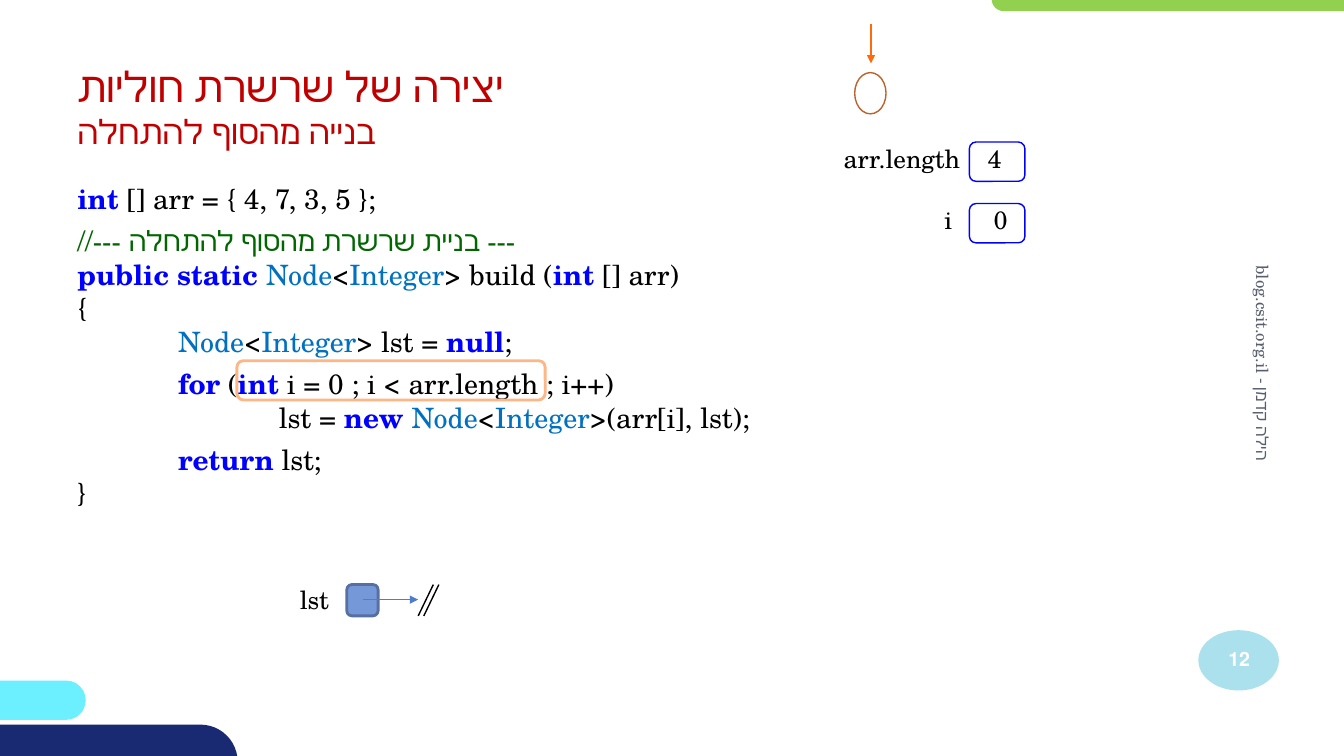
from dataclasses import dataclass

from lxml import etree
from pptx import Presentation
from pptx.dml.color import RGBColor
from pptx.enum.shapes import MSO_CONNECTOR, MSO_SHAPE
from pptx.enum.text import MSO_ANCHOR, PP_ALIGN
from pptx.oxml.ns import qn
from pptx.slide import Slide
from pptx.util import Cm, Pt

ELLIPSE, ROUNDED = MSO_SHAPE.OVAL, MSO_SHAPE.ROUNDED_RECTANGLE
STRAIGHT = MSO_CONNECTOR.STRAIGHT
TOP, MIDDLE, BOTTOM = MSO_ANCHOR.TOP, MSO_ANCHOR.MIDDLE, MSO_ANCHOR.BOTTOM
LEFT, CENTER, RIGHT = PP_ALIGN.LEFT, PP_ALIGN.CENTER, PP_ALIGN.RIGHT
CODE_TABS = (2.54, 5.08)


@dataclass(frozen=True)
class Theme:
    font: str = "TeX Gyre Schola"
    black: str = "000000"
    white: str = "FFFFFF"
    title: str = "C00000"
    keyword: str = "0000FF"
    type_name: str = "0070C0"
    comment: str = "006600"
    footer: str = "575F6D"
    badge: str = "AAE1EC"
    cyan: str = "6CF0FF"
    green: str = "92D050"
    navy: str = "192A72"
    node: str = "7598D9"
    node_edge: str = "5770A1"
    pointer: str = "4F7CCF"
    highlight: str = "FEB687"
    orange: str = "FF6B0A"
    brown: str = "BC6329"
    title_size: int = 30
    subtitle_size: int = 24
    code_size: int = 20
    label_size: int = 18
    number_size: int = 14
    footer_size: int = 12


T = Theme()


@dataclass(frozen=True)
class Run:
    text: str
    size: int = T.code_size
    color: str = T.black
    bold: bool = False
    small_caps: bool = False


@dataclass(frozen=True)
class Para:
    runs: tuple[Run, ...]
    align: PP_ALIGN = LEFT
    rtl: bool = False
    before: float = 0
    tabs: tuple[float, ...] = ()


@dataclass(frozen=True)
class Box:
    at: tuple[float, float, float, float]
    paras: tuple[Para, ...]
    anchor: MSO_ANCHOR = TOP
    rotation: int = 0


@dataclass(frozen=True)
class Shape:
    kind: MSO_SHAPE
    at: tuple[float, float, float, float]
    fill: str | None = None
    line: str | None = None
    width: float = 1
    round_ends: bool = False


@dataclass(frozen=True)
class Line:
    at: tuple[float, float, float, float]
    color: str
    arrow: bool = False


def kw(text: str) -> Run:
    return Run(text, color=T.keyword, bold=True)


def typ(text: str) -> Run:
    return Run(text, color=T.type_name)


NODE_OF_INTEGER = (typ("Node"), Run("<"), typ("Integer"))

BACKDROP = (
    Shape(ELLIPSE, (30.2, 15.88, 2.03, 1.52), T.badge),
    Shape(ROUNDED, (-11.07, 17.15, 13.23, 0.99), T.cyan, round_ends=True),
    Shape(ROUNDED, (24.99, -0.33, 14.73, 0.61), T.green, round_ends=True),
    Shape(ROUNDED, (-15.47, 18.26, 21.46, 1.88), T.navy, round_ends=True),
)

TITLE = Box((1.7, 0.76, 27.66, 3.18), (Para((
    Run("יצירה של שרשרת חוליות\n", T.title_size, T.title, small_caps=True),
    Run("בנייה מהסוף להתחלה", T.subtitle_size, T.title, small_caps=True),
), rtl=True),), BOTTOM)

CODE = Box((1.7, 4.45, 27.66, 13.54), (
    Para((kw("int"), Run(" [] arr = { 4, 7, 3, 5 };"))),
    Para((
        Run("//--- בניית שרשרת מהסוף להתחלה ---\n", color=T.comment),
        kw("public static "), *NODE_OF_INTEGER, Run("> build ("),
        kw("int"), Run(" [] arr)\n{\n\t"),
        *NODE_OF_INTEGER, Run("> lst = "), kw("null"), Run(";"),
    ), before=6, tabs=CODE_TABS),
    Para((
        Run("\t"), kw("for"), Run(" ("), kw("int"),
        Run(" i = 0 ; i < arr.length ; i++)\n\t\tlst = "),
        kw("new "), *NODE_OF_INTEGER, Run(">(arr[i], lst);"),
    ), before=6, tabs=CODE_TABS),
    Para((Run("\t"), kw("return"), Run(" lst;\n}")), before=6, tabs=CODE_TABS),
))

LABELS = (
    Box((7.14, 14.6, 1.4, 1.02),
        (Para((Run("lst", T.label_size),), RIGHT, rtl=True),)),
    Box((21.01, 3.48, 5.21, 2.57), (
        Para((Run("arr.length\t4", T.label_size),), tabs=(3.63,)),
        Para((Run("\ti\t0", T.label_size),), before=22, tabs=(2.54, 3.78)),
    )),
    Box((27.38, 10.21, 8.89, 1.35), (Para((
        Run("הילה קדמן - blog.csit.org.il", T.footer_size, T.footer),
    ), rtl=True),), MIDDLE, 90),
    Box((30.1, 15.88, 2.26, 1.45), (Para((
        Run("12", T.number_size, T.white, True),
    ), CENTER, rtl=True),), MIDDLE),
)

DIAGRAM = (
    Shape(ROUNDED, (8.74, 14.73, 0.79, 0.79), T.node, T.node_edge, 2),
    Shape(ROUNDED, (5.97, 9.09, 7.77, 0.99), line=T.highlight, width=2),
    Shape(ELLIPSE, (21.54, 1.83, 0.79, 1.04), line=T.brown),
    *(Shape(ROUNDED, (24.43, 3.58 + 1.55 * row, 1.4, 0.99), line=T.keyword)
      for row in range(2)),
)

LINES = (
    Line((9.14, 15.11, 10.54, 15.11), T.pointer, True),
    *(Line((10.92 + shift, 14.73, 10.54 + shift, 15.52), T.black)
      for shift in (0, 0.14)),
    Line((21.95, 0.61, 21.95, 1.6), T.orange, True),
)


def add_shape(s: Slide, item: Shape) -> None:
    sp = s.shapes.add_shape(item.kind, *map(Cm, item.at))
    sp.shadow.inherit = False
    if item.round_ends:
        sp.adjustments[0] = 0.5
    if item.fill:
        sp.fill.solid()
        sp.fill.fore_color.rgb = RGBColor.from_string(item.fill)
    else:
        sp.fill.background()
    if item.line:
        sp.line.color.rgb = RGBColor.from_string(item.line)
        sp.line.width = Pt(item.width)
    else:
        sp.line.fill.background()


def add_line(s: Slide, item: Line) -> None:
    cx = s.shapes.add_connector(STRAIGHT, *map(Cm, item.at))
    cx.line.color.rgb = RGBColor.from_string(item.color)
    cx.line.width = Pt(1)
    if item.arrow:
        etree.SubElement(cx.line._get_or_add_ln(), qn("a:tailEnd"), type="triangle")
    etree.SubElement(cx._element.spPr, qn("a:effectLst"))


def add_run(p, item: Run) -> None:
    for i, text in enumerate(item.text.split("\n")):
        if i:
            p.add_line_break()
        if not text:
            continue
        r = p.add_run()
        r.text = text
        fmt = {"name": T.font, "size": Pt(item.size), "bold": item.bold}
        for name, value in fmt.items():
            setattr(r.font, name, value)
        r.font.color.rgb = RGBColor.from_string(item.color)
        if item.small_caps:
            r._r.get_or_add_rPr().set("cap", "small")


def add_text(s: Slide, box: Box) -> None:
    sp = s.shapes.add_textbox(*map(Cm, box.at))
    sp.rotation = box.rotation
    tf = sp.text_frame
    tf.word_wrap = True
    tf.vertical_anchor = box.anchor
    for i, item in enumerate(box.paras):
        p = tf.add_paragraph() if i else tf.paragraphs[0]
        pPr = p._p.get_or_add_pPr()
        if item.tabs:
            tabs = etree.SubElement(pPr, qn("a:tabLst"))
            for stop in item.tabs:
                etree.SubElement(tabs, qn("a:tab"), pos=str(Cm(stop)), algn="l")
        if item.rtl:
            pPr.set("rtl", "1")
        for name, value in {"alignment": item.align, "space_before": Pt(item.before)}.items():
            setattr(p, name, value)
        for run in item.runs:
            add_run(p, run)


def main() -> None:
    prs = Presentation()
    prs.slide_width, prs.slide_height = Cm(33.87), Cm(19.05)
    s = prs.slides.add_slide(prs.slide_layouts[6])
    for items, draw in (
        (BACKDROP, add_shape),
        ((TITLE, CODE), add_text),
        (DIAGRAM, add_shape),
        (LINES, add_line),
        (LABELS, add_text),
    ):
        for item in items:
            draw(s, item)
    prs.save("out.pptx")


if __name__ == "__main__":
    main()
